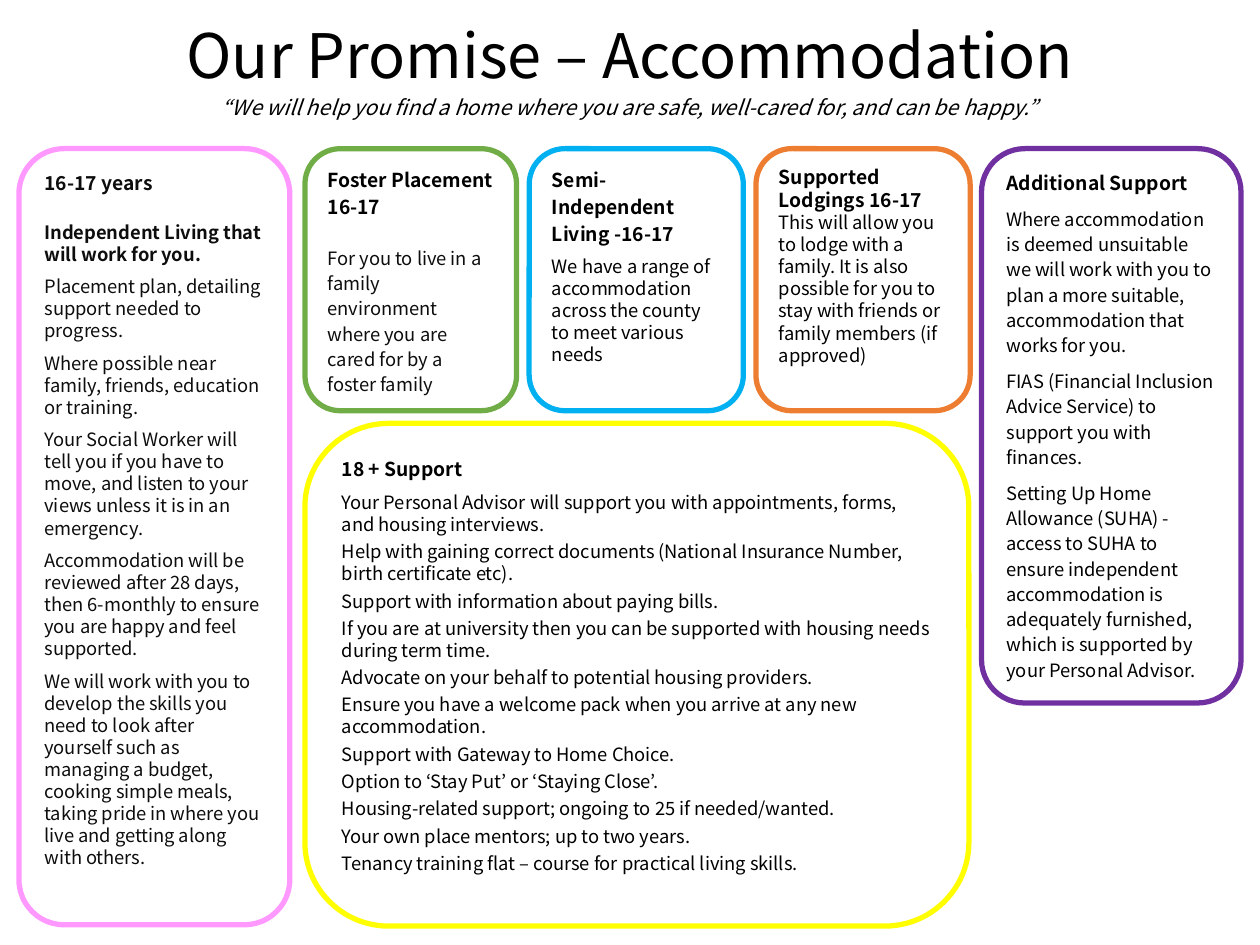
from dataclasses import dataclass

from pptx import Presentation
from pptx import util as u
from pptx.dml.color import RGBColor
from pptx.enum import shapes, text

BLACK = RGBColor(0x00, 0x00, 0x00)
NEAR_BLACK = RGBColor(0x0D, 0x0D, 0x0D)
WHITE = RGBColor(0xFF, 0xFF, 0xFF)
PINK = RGBColor(0xFF, 0x99, 0xFF)
PURPLE = RGBColor(0x70, 0x30, 0xA0)
GREEN = RGBColor(0x70, 0xAD, 0x47)
ORANGE = RGBColor(0xED, 0x7D, 0x31)
BLUE = RGBColor(0x00, 0xB0, 0xF0)
YELLOW = RGBColor(0xFF, 0xFF, 0x00)


@dataclass
class Line:
    words: str
    size: float = 10.5
    bold: bool = False
    italic: bool = False
    color: RGBColor = BLACK
    spacing: float = 1.0
    after: float = 0


def heading(words, after=0, spacing=1.15, size=11, color=BLACK):
    return Line(words, size, True, color=color, spacing=spacing, after=after)


def body(lines, after=0, spacing=1.0, color=BLACK):
    return [Line(words, color=color, spacing=spacing, after=after) for words in lines]


class Board:
    SCALE = u.Inches(1) // 100
    FONT = "Noto Sans CJK KR"
    OUTLINE = u.Pt(3)

    def __init__(self, slide):
        self.slide = slide

    def panel(self, kind, box, lines, align):
        shape = self.slide.shapes.add_shape(kind, *(value * self.SCALE for value in box))
        shape.shadow.inherit = False
        frame = shape.text_frame
        frame.word_wrap = True
        frame.vertical_anchor = text.MSO_ANCHOR.TOP
        frame.text = "\n".join(line.words for line in lines)
        for paragraph, line in zip(frame.paragraphs, lines):
            paragraph.alignment = align
            paragraph.line_spacing = line.spacing
            paragraph.space_after = u.Pt(line.after)
            for run in paragraph.runs:
                run.font.name = self.FONT
                run.font.size = u.Pt(line.size)
                run.font.bold = line.bold
                run.font.italic = line.italic
                run.font.color.rgb = line.color
        return shape

    def banner(self, box, lines):
        shape = self.panel(shapes.MSO_SHAPE.RECTANGLE, box, lines, text.PP_ALIGN.CENTER)
        shape.fill.solid()
        shape.fill.fore_color.rgb = WHITE
        shape.line.fill.background()

    def card(self, box, outline, lines, filled=False):
        shape = self.panel(shapes.MSO_SHAPE.ROUNDED_RECTANGLE, box, lines, text.PP_ALIGN.LEFT)
        if filled:
            shape.fill.solid()
            shape.fill.fore_color.rgb = WHITE
        else:
            shape.fill.background()
        shape.line.color.rgb = outline
        shape.line.width = self.OUTLINE


def main():
    presentation = Presentation()
    presentation.slide_width = u.Inches(10)
    presentation.slide_height = u.Inches(7.5)
    board = Board(presentation.slides.add_slide(presentation.slide_layouts[6]))
    top, short = 118, 208

    board.banner((0, 0, 1000, 108), [
        Line("Our Promise – Accommodation", 35, spacing=1.15),
        Line("“We will help you find a home where you are safe, well-cared for, "
             "and can be happy.”", 12, italic=True, spacing=1.15),
    ])
    board.card((15, top, 215, 616), PINK, [
        heading("16-17 years", after=15, color=NEAR_BLACK),
        heading("Independent Living that will work for you.", 6, 1.0, 10.5, NEAR_BLACK),
        *body([
            "Placement plan, detailing support needed to progress.",
            "Where possible near family, friends, education or training.",
            "Your Social Worker will tell you if you have to move, and listen to your "
            "views unless it is in an emergency.",
            "Accommodation will be reviewed after 28 days, then 6-monthly to ensure "
            "you are happy and feel supported.",
            "We will work with you to develop the skills you need to look after yourself "
            "such as managing a budget, cooking simple meals, taking pride in where you "
            "live and getting along with others.",
        ], after=6, color=NEAR_BLACK),
    ])
    board.card((779, top, 206, 440), PURPLE, [
        heading("Additional Support", after=6),
        *body([
            "Where accommodation is deemed unsuitable we will work with you to plan a "
            "more suitable, accommodation that works for you.",
            "FIAS (Financial Inclusion Advice Service) to support you with finances.",
            "Setting Up Home Allowance (SUHA) - access to SUHA to ensure independent "
            "accommodation is adequately furnished, which is supported by your "
            "Personal Advisor.",
        ], after=6, spacing=1.15),
    ])
    board.card((242, top, 168, short), GREEN, [
        heading("Foster Placement"),
        heading("16-17", after=14.5),
        *body(["For you to live in a family environment where you are cared for by a "
               "foster family"], spacing=1.15, color=NEAR_BLACK),
    ], filled=True)
    board.card((600, top, 170, short), ORANGE, [
        heading("Supported Lodgings 16-17", spacing=1.0),
        *body(["This will allow you to lodge with a family. It is also possible for you "
               "to stay with friends or family members (if approved)"]),
    ], filled=True)
    board.card((420, top, 170, short), BLUE, [
        heading("Semi-Independent Living -16-17", after=6),
        *body(["We have a range of accommodation across the county to meet various needs"],
              after=6),
    ])
    board.card((242, 336, 527, 399), YELLOW, [
        heading("18 + Support", after=6),
        *body([
            "Your Personal Advisor will support you with appointments, forms, and "
            "housing interviews.",
            "Help with gaining correct documents (National Insurance Number, birth "
            "certificate etc).",
            "Support with information about paying bills.",
            "If you are at university then you can be supported with housing needs "
            "during term time.",
            "Advocate on your behalf to potential housing providers.",
            "Ensure you have a welcome pack when you arrive at any new accommodation.",
            "Support with Gateway to Home Choice.",
            "Option to ‘Stay Put’ or ‘Staying Close’.",
            "Housing-related support; ongoing to 25 if needed/wanted.",
            "Your own place mentors; up to two years.",
            "Tenancy training flat – course for practical living skills.",
        ], after=3),
    ], filled=True)
    presentation.save("out.pptx")


if __name__ == "__main__":
    main()
